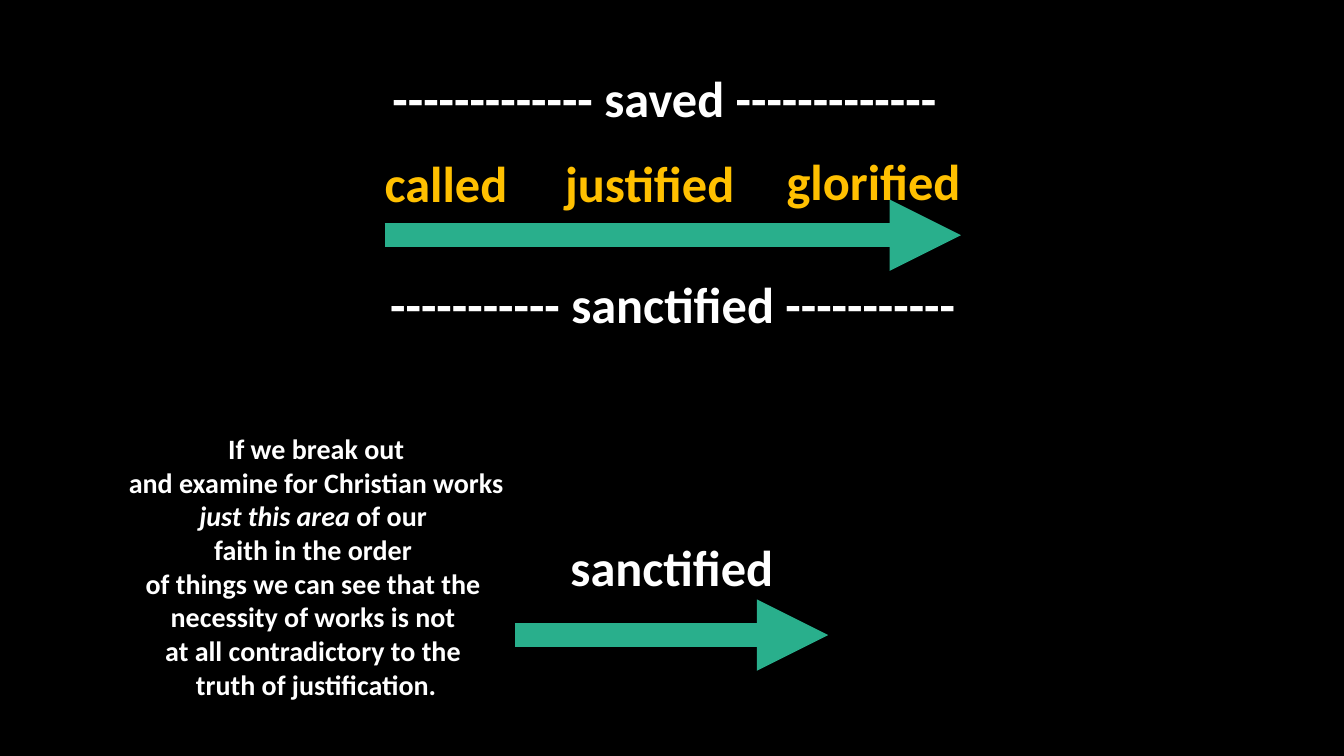
"""Draw the order of salvation as arrows, with sanctification broken out below."""
from dataclasses import dataclass

import pptx
import pptx.dml.color
import pptx.enum.shapes
import pptx.enum.text
import pptx.oxml
import pptx.oxml.ns
import pptx.shapes.autoshape
import pptx.shapes.connector
import pptx.shapes.shapetree
import pptx.util

SLIDE_WIDTH = pptx.util.Inches(13.333)
SLIDE_HEIGHT = pptx.util.Inches(7.5)
COLUMNS, ROWS = 16, 9


@dataclass(frozen=True)
class Theme:
    font: str = "Calibri"
    background: str = "000000"
    plain: str = "FFFFFF"
    step: str = "FFC000"
    arrow: str = "29AF8C"
    stage_size: float = 36
    remark_size: float = 20
    arrow_weight: float = 17


THEME = Theme()


@dataclass(frozen=True)
class Stage:
    text: str
    column: float
    row: float
    columns: float
    color: str = THEME.plain
    rows: float = 0.85


@dataclass(frozen=True)
class Timeline:
    start: float
    end: float
    row: float
    stages: tuple[Stage, ...]


SALVATION = Timeline(4.58, 11.44, 2.8, (
    Stage("called", 4.45, 1.75, 1.72, THEME.step),
    Stage("justified", 6.59, 1.75, 2.29, THEME.step),
    Stage("glorified", 9.23, 1.73, 2.34, THEME.step),
    Stage(f"{'-' * 11} sanctified {'-' * 11}", 4.49, 3.19, 7.04),
    Stage(f"{'-' * 13} saved {'-' * 13}", 4.43, 0.74, 6.96),
))
SANCTIFICATION = Timeline(6.13, 9.86, 7.56, (
    Stage("sanctified", 6.65, 6.32, 2.7),
))
REMARK_OPENING = "If we break out\vand examine for Christian works\v"
REMARK_EMPHASIS = "just this area "
REMARK_CLOSING = (
    "of our \vfaith in the order \vof things we can see that the \v"
    "necessity of works is not \vat all contradictory to the \v"
    "truth of justification."
)


def across(columns: float) -> pptx.util.Emu:
    """Turn grid columns into a length."""
    return pptx.util.Emu(round(SLIDE_WIDTH * columns / COLUMNS))


def down(rows: float) -> pptx.util.Emu:
    """Turn grid rows into a length."""
    return pptx.util.Emu(round(SLIDE_HEIGHT * rows / ROWS))


def rgb(color: str) -> pptx.dml.color.RGBColor:
    """Turn a hex string into a colour."""
    return pptx.dml.color.RGBColor.from_string(color)


def add_text(shapes, *texts: str, column: float, row: float, columns: float,
             rows: float, size: float, color: str = THEME.plain,
             wrap: bool = False, emphasis: str = "") -> pptx.shapes.autoshape.Shape:
    """Add a centred bold text box, with the emphasised text in italics."""
    box = shapes.add_textbox(across(column), down(row), across(columns), down(rows))
    frame = box.text_frame
    frame.word_wrap = wrap
    frame.auto_size = pptx.enum.text.MSO_AUTO_SIZE.SHAPE_TO_FIT_TEXT
    paragraph = frame.paragraphs[0]
    paragraph.alignment = pptx.enum.text.PP_ALIGN.CENTER
    for text in texts:
        for index, line in enumerate(text.split("\v")):
            if index:
                paragraph.add_line_break()
            if not line:
                continue
            run = paragraph.add_run()
            run.text = line
            run.font.name = THEME.font
            run.font.size = pptx.util.Pt(size)
            run.font.bold = True
            run.font.italic = text == emphasis
            run.font.color.rgb = rgb(color)
    paragraph.font.size = pptx.util.Pt(size)
    return box


def add_arrow(shapes, start: float, end: float, row: float) -> pptx.shapes.connector.Connector:
    """Add a thick horizontal arrow pointing right."""
    arrow = shapes.add_connector(
        pptx.enum.shapes.MSO_CONNECTOR.STRAIGHT,
        across(start), down(row), across(end), down(row))
    arrow.line.color.rgb = rgb(THEME.arrow)
    arrow.line.width = pptx.util.Pt(THEME.arrow_weight)
    head = pptx.oxml.parse_xml(
        f'<a:tailEnd {pptx.oxml.ns.nsdecls("a")} type="triangle"/>')
    arrow.line._get_or_add_ln().append(head)
    properties = arrow._element.spPr
    properties.append(pptx.oxml.parse_xml(
        f'<a:effectLst {pptx.oxml.ns.nsdecls("a")}/>'))
    return arrow


def add_timeline(shapes: pptx.shapes.shapetree.SlideShapes, timeline: Timeline) -> None:
    """Add an arrow grouped with its stages."""
    group = shapes.add_group_shape().shapes
    add_arrow(group, timeline.start, timeline.end, timeline.row)
    for stage in timeline.stages:
        add_text(group, stage.text, column=stage.column, row=stage.row,
                 columns=stage.columns, rows=stage.rows,
                 size=THEME.stage_size, color=stage.color)


def main() -> None:
    """Build and save the slide."""
    deck = pptx.Presentation()
    deck.slide_width, deck.slide_height = SLIDE_WIDTH, SLIDE_HEIGHT
    slide = deck.slides.add_slide(deck.slide_layouts.get_by_name("Blank"))
    slide.background.fill.solid()
    slide.background.fill.fore_color.rgb = rgb(THEME.background)
    for timeline in (SALVATION, SANCTIFICATION):
        add_timeline(slide.shapes, timeline)
    add_text(slide.shapes, REMARK_OPENING, REMARK_EMPHASIS, REMARK_CLOSING,
             column=1.21, row=5.08, columns=5.11, rows=3.35,
             size=THEME.remark_size, wrap=True, emphasis=REMARK_EMPHASIS)
    deck.save("out.pptx")


if __name__ == "__main__":
    main()
